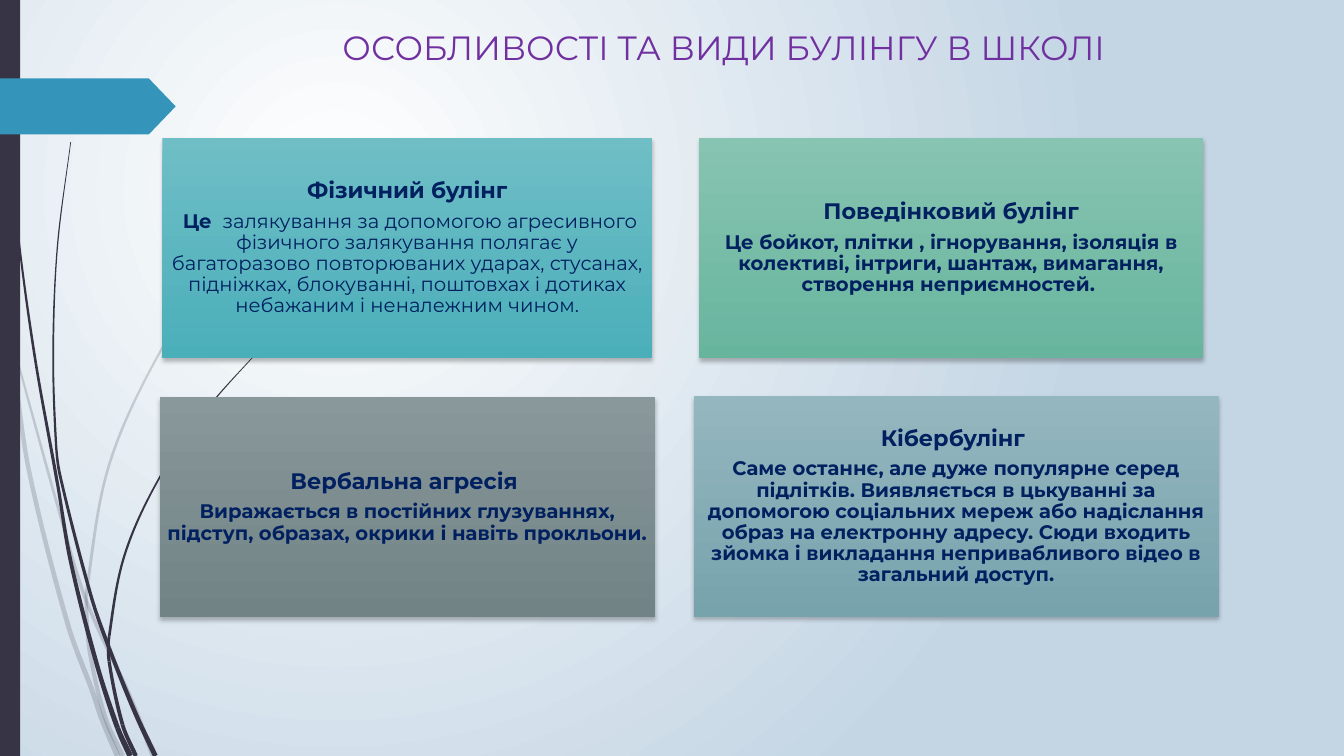
from dataclasses import dataclass
from math import dist
from typing import NamedTuple

from lxml.etree import SubElement
from pptx import Presentation
from pptx.dml.color import RGBColor
from pptx.dml.fill import FillFormat
from pptx.enum.shapes import MSO_SHAPE as Preset
from pptx.enum.text import MSO_ANCHOR as Anchor, PP_ALIGN as Align
from pptx.oxml.ns import qn
from pptx.slide import Slide
from pptx.text.text import TextFrame
from pptx.util import Pt

PX = 6350  # EMU in one px, 144 px to the inch
WIDTH, HEIGHT = 1920, 1080


@dataclass(frozen=True)
class Theme:
    font: str = "Montserrat"
    title_size: int = 24
    heading_size: int = 16
    body_size: int = 14
    title: str = "7030A0"
    text: str = "002060"
    dark: str = "373545"
    accent: str = "3494BA"
    backdrop: tuple[str, str] = ("FFFFFF", "C4D5E4")


class Box(NamedTuple):
    left: int
    top: int
    width: int
    height: int

    def emu(self) -> list[int]:
        return [length * PX for length in self]


class Knot(NamedTuple):
    """A point of an outline with the unit direction of travel there."""
    x: float
    y: float
    dx: float
    dy: float


class Strand(NamedTuple):
    """A grass blade in pieces: its spine, the knots where pieces meet, its end widths."""
    spine: list[tuple[int, int]]
    joints: list[int]
    start_width: int
    end_width: int
    opacity: int


class Span(NamedTuple):
    text: str
    bold: bool = True


class Card(NamedTuple):
    box: Box
    colors: tuple[str, str]
    heading: str
    body: list[Span]


THEME = Theme()
PALE, SOLID = 20, 100

STRANDS = [
    Strand([(0, 418), (16, 504), (22, 541), (42, 675), (97, 892), (133, 990), (146, 1028),
            (168, 1080)], [1, 6], 5, 8, PALE),
    Strand([(20, 497), (90, 750), (124, 860), (187, 998), (219, 1080)], [2], 3, 7, PALE),
    Strand([(449, 220), (386, 284), (328, 351), (229, 502), (156, 664), (124, 843), (124, 878),
            (128, 930), (150, 1024), (175, 1080)], [5, 6, 8], 1, 7, PALE),
    Strand([(5, 0), (10, 158), (26, 335), (50, 511), (82, 690), (101, 802), (138, 948),
            (168, 1040), (186, 1080)], [4, 7], 1, 8, SOLID),
    Strand([(101, 203), (82, 353), (76, 502), (80, 633), (86, 680), (130, 851), (156, 926),
            (193, 1018), (222, 1080)], [4, 6], 1, 7, SOLID),
    Strand([(375, 495), (295, 585), (227, 684), (178, 793), (156, 909), (156, 945),
            (175, 1035), (194, 1080)], [4, 5, 6], 1, 6, SOLID),
]

CARDS = [
    Card(Box(232, 197, 700, 315), ("6FBEC6", "4BAFBA"), "Фізичний булінг", [
        Span(" Це "),
        Span(" залякування за допомогою агресивного фізичного залякування полягає у "
             "багаторазово повторюваних ударах, стусанах, підніжках, блокуванні, "
             "поштовхах і дотиках небажаним і неналежним чином.", bold=False)]),
    Card(Box(999, 197, 720, 315), ("87C4B1", "68B59E"), "Поведінковий булінг", [
        Span("Це бойкот, плітки , ігнорування, ізоляція в колективі, інтриги, шантаж, "
             "вимагання, створення неприємностей. ")]),
    Card(Box(228, 567, 708, 315), ("89989A", "718385"), "Вербальна агресія ", [
        Span("Виражається в постійних глузуваннях, підступ, образах, окрики і навіть "
             "прокльони.")]),
    Card(Box(991, 566, 750, 315), ("94B6BF", "77A3AD"), "Кібербулінг ", [
        Span("Саме останнє, але дуже популярне серед підлітків. Виявляється в цькуванні "
             "за допомогою соціальних мереж або надіслання образ на електронну адресу. "
             "Сюди входить зйомка і викладання непривабливого відео в загальний доступ.")]),
]


def rgb(code: str) -> RGBColor:
    return RGBColor.from_string(code)


def fill_gradient(fill: FillFormat, colors: tuple[str, str]) -> None:
    fill.gradient()
    for stop, color in zip(fill.gradient_stops, colors):
        stop.color.rgb = rgb(color)


def paint_backdrop(page: Slide) -> None:
    fill_gradient(page.background.fill, THEME.backdrop)
    gradient = page.element.find(".//" + qn("a:gradFill"))
    gradient.remove(gradient.find(qn("a:lin")))
    circle = SubElement(gradient, qn("a:path"), path="circle")
    SubElement(circle, qn("a:fillToRect"), l="50000", t="50000", r="100000", b="100000")


def paint(shape, color: str) -> None:
    shape.shadow.inherit = False
    shape.line.fill.background()
    shape.fill.solid()
    shape.fill.fore_color.rgb = rgb(color)


def strand_edges(strand: Strand) -> tuple[list[Knot], list[Knot]]:
    left, right = [], []
    last = len(strand.spine) - 1
    for index, (x, y) in enumerate(strand.spine):
        before = strand.spine[max(index - 1, 0)]
        after = strand.spine[min(index + 1, last)]
        length = dist(before, after)
        dx, dy = (after[0] - before[0]) / length, (after[1] - before[1]) / length
        half = (strand.start_width + (strand.end_width - strand.start_width) * index / last) / 2
        left.append(Knot(x - dy * half, y + dx * half, dx, dy))
        right.append(Knot(x + dy * half, y - dx * half, -dx, -dy))
    return left, right


def bend(line, start: Knot, end: Knot, origin: tuple[int, int]) -> None:
    """Turn one straight outline segment into a cubic curve."""
    reach = dist(start[:2], end[:2]) / 3
    controls = [(start.x + start.dx * reach, start.y + start.dy * reach),
                (end.x - end.dx * reach, end.y - end.dy * reach), end[:2]]
    line.tag = qn("a:cubicBezTo")
    line.remove(line[0])
    for point in controls:
        x, y = (str(round(value * PX - base)) for value, base in zip(point, origin))
        SubElement(line, qn("a:pt"), x=x, y=y)


def draw_strand(page: Slide, strand: Strand) -> None:
    left, right = strand_edges(strand)
    stops = [0, *strand.joints, len(left) - 1]
    for first, last in zip(stops, stops[1:]):
        piece = slice(first, last + 1)
        knots = [*left[piece], *reversed(right[piece])]
        points = [(round(knot.x * PX), round(knot.y * PX)) for knot in knots]
        builder = page.shapes.build_freeform(*points[0])
        builder.add_line_segments(points[1:])
        blade = builder.convert_to_shape()
        paint(blade, THEME.dark)
        if strand.opacity < SOLID:
            color = blade.element.spPr.find(".//" + qn("a:srgbClr"))
            SubElement(color, qn("a:alpha"), val=str(strand.opacity * 1000))
        tip = last - first
        lines = blade.element.findall(".//" + qn("a:lnTo"))
        for index, (start, end) in enumerate(zip(knots, knots[1:])):
            if index != tip:
                bend(lines[index], start, end, (blade.left, blade.top))


def add_preset(page: Slide, preset: Preset, box: Box, color: str):
    shape = page.shapes.add_shape(preset, *box.emu())
    paint(shape, color)
    return shape


def add_text(frame: TextFrame, para, spans: list[Span], size: int, color: str) -> None:
    frame.word_wrap = True
    para.alignment = Align.CENTER
    para.font.name = THEME.font
    para.font.size = Pt(size)
    para.font.color.rgb = rgb(color)
    for text, bold in spans:
        span = para.add_run()
        span.text = text
        span.font.bold = bold


def draw_card(page: Slide, card: Card) -> None:
    shape = add_preset(page, Preset.RECTANGLE, card.box, card.colors[0])
    fill_gradient(shape.fill, card.colors)
    shape.fill.gradient_angle = 270
    effects = shape.element.spPr.find(qn("a:effectLst"))
    shadow = SubElement(effects, qn("a:outerShdw"), blurRad=str(Pt(3)), dist=str(Pt(2)),
                        dir="5400000", rotWithShape="0")
    SubElement(SubElement(shadow, qn("a:srgbClr"), val="000000"), qn("a:alpha"), val="25000")
    frame = shape.text_frame
    frame.vertical_anchor = Anchor.MIDDLE
    frame.margin_left = frame.margin_right = frame.margin_top = frame.margin_bottom = 10 * PX
    heading, body = frame.paragraphs[0], frame.add_paragraph()
    add_text(frame, heading, [Span(card.heading)], THEME.heading_size, THEME.text)
    add_text(frame, body, card.body, THEME.body_size, THEME.text)
    heading.line_spacing = body.line_spacing = 0.9
    heading.space_after = Pt(5.6)


def main() -> None:
    deck = Presentation()
    deck.slide_width, deck.slide_height = WIDTH * PX, HEIGHT * PX
    page = deck.slides.add_slide(deck.slide_layouts[6])
    paint_backdrop(page)
    for strand in STRANDS:
        draw_strand(page, strand)
    add_preset(page, Preset.RECTANGLE, Box(0, 0, 29, HEIGHT), THEME.dark)
    arrow = add_preset(page, Preset.PENTAGON, Box(0, 112, 251, 80), THEME.accent)
    arrow.adjustments[0] = 0.48
    title = page.shapes.add_textbox(*Box(338, 32, 1404, 202).emu()).text_frame
    add_text(title, title.paragraphs[0], [Span("ОСОБЛИВОСТІ ТА ВИДИ БУЛІНГУ В ШКОЛІ ", bold=False)],
             THEME.title_size, THEME.title)
    for card in CARDS:
        draw_card(page, card)
    deck.save("out.pptx")


if __name__ == "__main__":
    main()
